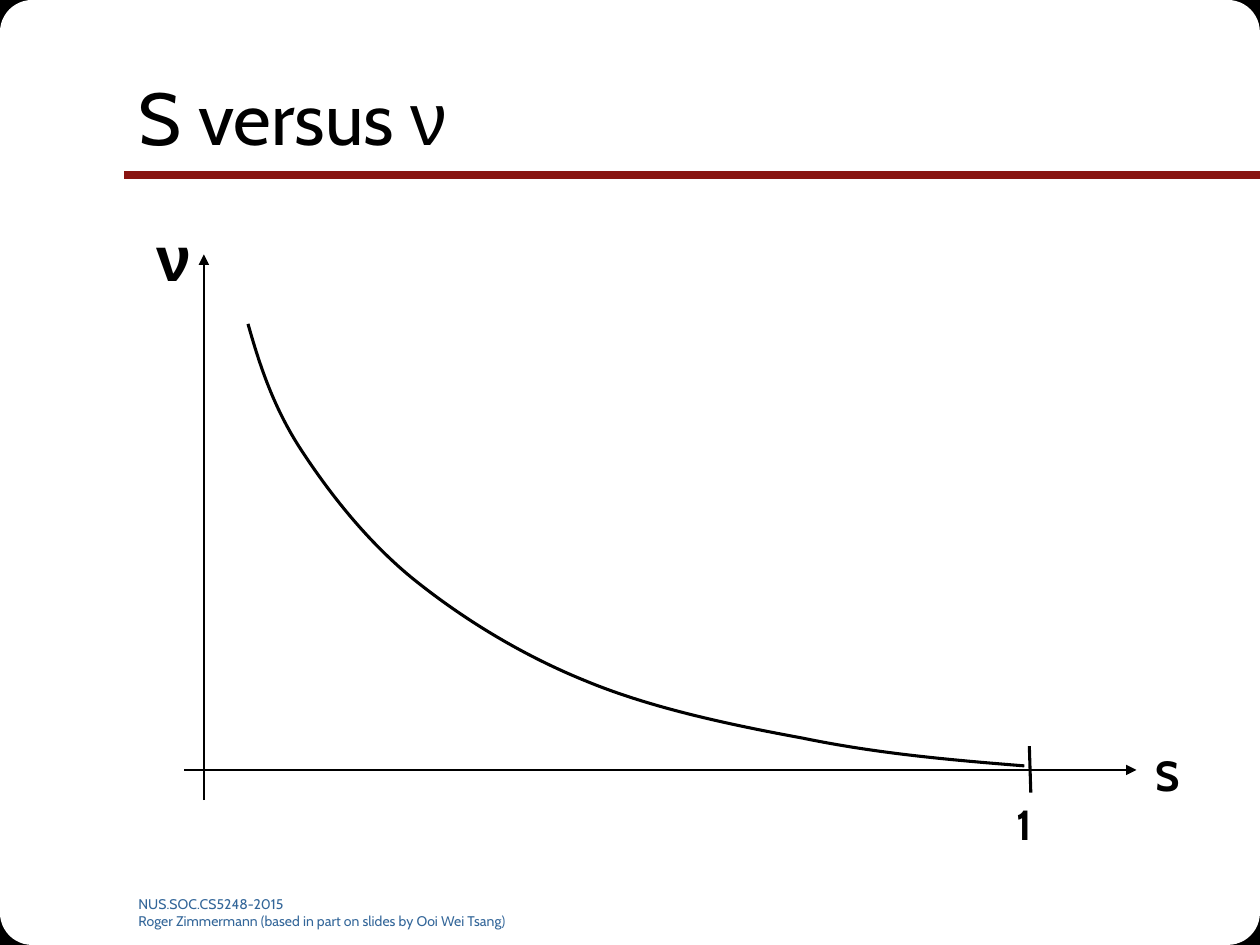
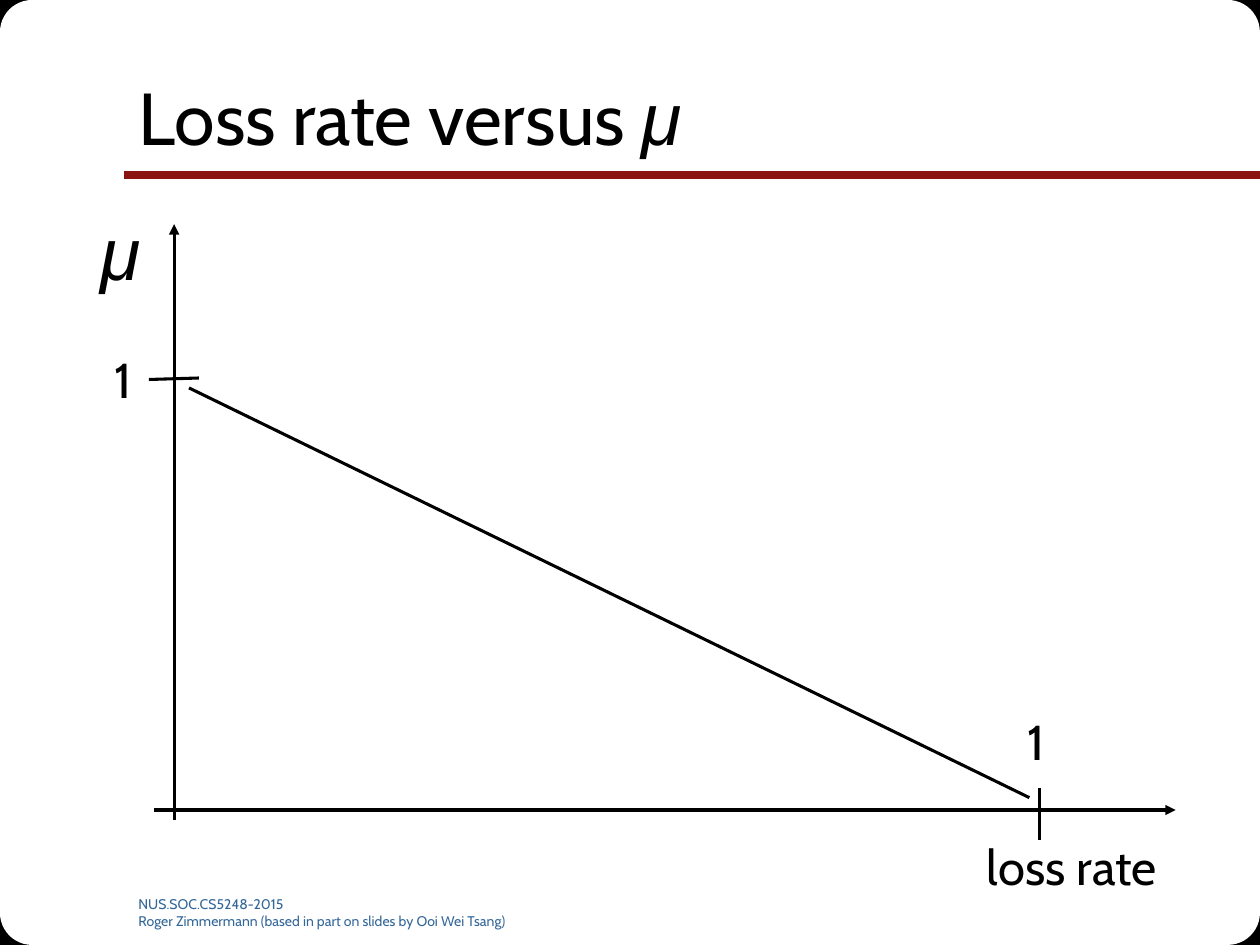
from lxml import etree
from pptx import Presentation
from pptx.dml.color import RGBColor
from pptx.enum import shapes, text
from pptx.oxml.ns import qn
from pptx.util import Cm, Pt

WIDTH, HEIGHT = 25.4, 19.05
FOOTER = (
    "NUS.SOC.CS5248-2015\n"
    "Roger Zimmermann (based in part on slides by Ooi Wei Tsang)"
)


def color(hex_code):
    return RGBColor.from_string(hex_code)


class Deck:
    """Holds the shared style and the current slide."""

    FONT, SYMBOL_FONT = "Cabin", "Arial"
    INK, PAPER, RULE, FOOTER_INK = "000000", "FFFFFF", "891411", "336699"
    THICK = 1.75

    def __init__(self):
        self.presentation = Presentation()
        self.presentation.slide_width = Cm(WIDTH)
        self.presentation.slide_height = Cm(HEIGHT)
        self.slide = None

    def add_slide(self, words, symbol, italic=False):
        layout = self.presentation.slide_layouts[5]
        self.slide = self.presentation.slides.add_slide(layout)
        self.frame()
        self.title(words, symbol, italic)

    def style_run(self, run, size, font=FONT, ink=INK, bold=False, italic=False):
        run.font.size = Pt(size)
        run.font.name = font
        run.font.color.rgb = color(ink)
        run.font.bold = bold
        run.font.italic = italic

    # Shared frame: rounded black corners, rule and footer
    def frame(self):
        self.corners(shapes.MSO_SHAPE.RECTANGLE, 1.09, 1.12, self.INK, outlined=True)
        self.corners(shapes.MSO_SHAPE.ROUNDED_RECTANGLE, 3.89, 3.89, self.PAPER)
        self.line((WIDTH, 3.53), (2.49, 3.53), 4.5, self.RULE)
        self.label(FOOTER, 2.54, 17.93, 9.09, 0.71, 8, ink=self.FOOTER_INK, wrap=True)

    def corners(self, kind, width, height, fill, outlined=False):
        for left in (0, WIDTH - width):
            for top in (0, HEIGHT - height):
                shape = self.slide.shapes.add_shape(
                    kind, Cm(left), Cm(top), Cm(width), Cm(height))
                shape.shadow.inherit = False
                shape.fill.solid()
                shape.fill.fore_color.rgb = color(fill)
                if outlined:
                    shape.line.color.rgb = color(fill)
                    shape.line.width = Pt(0.75)
                else:
                    shape.line.fill.background()

    def title(self, words, symbol, italic):
        title = self.slide.shapes.title
        title.left, title.top = Cm(2.54), Cm(0.76)
        title.width, title.height = Cm(21.59), Cm(3.18)
        frame = title.text_frame
        frame.text = words
        frame.auto_size = text.MSO_AUTO_SIZE.NONE
        frame.vertical_anchor = text.MSO_ANCHOR.MIDDLE
        paragraph = frame.paragraphs[0]
        paragraph.alignment = text.PP_ALIGN.LEFT
        self.style_run(paragraph.runs[0], 42)
        run = paragraph.add_run()
        run.text = symbol
        self.style_run(run, 42, self.SYMBOL_FONT, italic=italic)
        # Keep the title in front of the white corners
        self.slide.shapes._spTree.append(title._element)

    def label(self, words, left, top, width, height, size,
              centered=False, wrap=False, **style):
        box = self.slide.shapes.add_textbox(Cm(left), Cm(top), Cm(width), Cm(height))
        frame = box.text_frame
        frame.text = words
        frame.word_wrap = wrap
        if not wrap:
            frame.auto_size = text.MSO_AUTO_SIZE.SHAPE_TO_FIT_TEXT
        for paragraph in frame.paragraphs:
            paragraph.alignment = (
                text.PP_ALIGN.CENTER if centered else text.PP_ALIGN.LEFT)
            for run in paragraph.runs:
                self.style_run(run, size, **style)

    def line(self, start, end, width=THICK, ink=INK, arrow=False):
        connector = self.slide.shapes.add_connector(
            shapes.MSO_CONNECTOR.STRAIGHT, *map(Cm, start + end))
        connector.line.color.rgb = color(ink)
        connector.line.width = Pt(width)
        properties = connector._element.spPr
        if arrow:
            etree.SubElement(
                properties.find(qn("a:ln")), qn("a:tailEnd"), type="triangle")
        etree.SubElement(properties, qn("a:effectLst"))

    def axes(self, left, right, bottom, top, origin, width):
        """Draw two arrows that cross at origin."""
        x, y = origin
        self.line((left, y), (right, y), width, arrow=True)
        self.line((x, bottom), (x, top), width, arrow=True)

    def curve(self, points):
        """Draw joined cubic curves: a start, then two controls and an end each."""
        start, *rest = [(Cm(x), Cm(y)) for x, y in points]
        builder = self.slide.shapes.build_freeform(*start)
        builder.add_line_segments(rest, close=False)
        shape = builder.convert_to_shape()
        shape.shadow.inherit = False
        shape.fill.background()
        shape.line.color.rgb = color(self.INK)
        shape.line.width = Pt(self.THICK)
        # Turn every three straight segments into one cubic segment
        segments = list(shape._element.iter(qn("a:lnTo")))
        for first in range(0, len(segments), 3):
            cubic = etree.SubElement(segments[first].getparent(), qn("a:cubicBezTo"))
            for segment in segments[first:first + 3]:
                cubic.append(segment[0])
                segment.getparent().remove(segment)


def scale_slide(deck):
    deck.add_slide("S versus ", "ν")
    deck.axes(3.71, 22.91, 16.13, 5.13, origin=(4.11, 15.52), width=1.25)
    # Axis labels
    deck.label("1", 20.24, 15.98, 1.04, 1.27, 24, bold=True)
    deck.label("S", 23.04, 14.99, 1.04, 1.27, 24, bold=True)
    deck.label("ν", 2.9, 4.29, 1.17, 1.78, 36, font=deck.SYMBOL_FONT, bold=True)
    # Tick and falling curve
    deck.line((20.75, 15.04), (20.78, 15.98))
    deck.curve([
        (5, 6.53),
        (5.23, 7.34), (5.49, 8.15), (6.02, 8.99),
        (6.58, 9.86), (7.34, 10.85), (8.28, 11.63),
        (9.25, 12.42), (10.46, 13.18), (11.79, 13.72),
        (13.11, 14.27), (14.71, 14.61), (16.18, 14.88),
        (17.68, 15.19), (19.15, 15.32), (20.65, 15.44),
    ])


def loss_slide(deck):
    deck.add_slide("Loss rate versus ", "μ", italic=True)
    deck.axes(3.1, 23.7, 16.54, 4.52, origin=(3.51, 16.33), width=deck.THICK)
    # Axis labels
    deck.label("μ", 1.75, 4.04, 1.37, 2.03, 42, centered=True,
               font=deck.SYMBOL_FONT, italic=True)
    for words, left, top, width in (
        ("loss rate", 19.51, 16.74, 4.19),
        ("1", 20.37, 14.22, 1.04),
        ("1", 1.96, 6.93, 1.04),
    ):
        deck.label(words, left, top, width, 1.45, 28, centered=True)
    # Ticks and falling line
    deck.line((3, 7.65), (4.01, 7.62))
    deck.line((20.96, 15.88), (20.96, 16.94))
    deck.line((3.81, 7.82), (20.75, 16.08))


def main():
    deck = Deck()
    scale_slide(deck)
    loss_slide(deck)
    deck.presentation.save("out.pptx")


if __name__ == "__main__":
    main()
